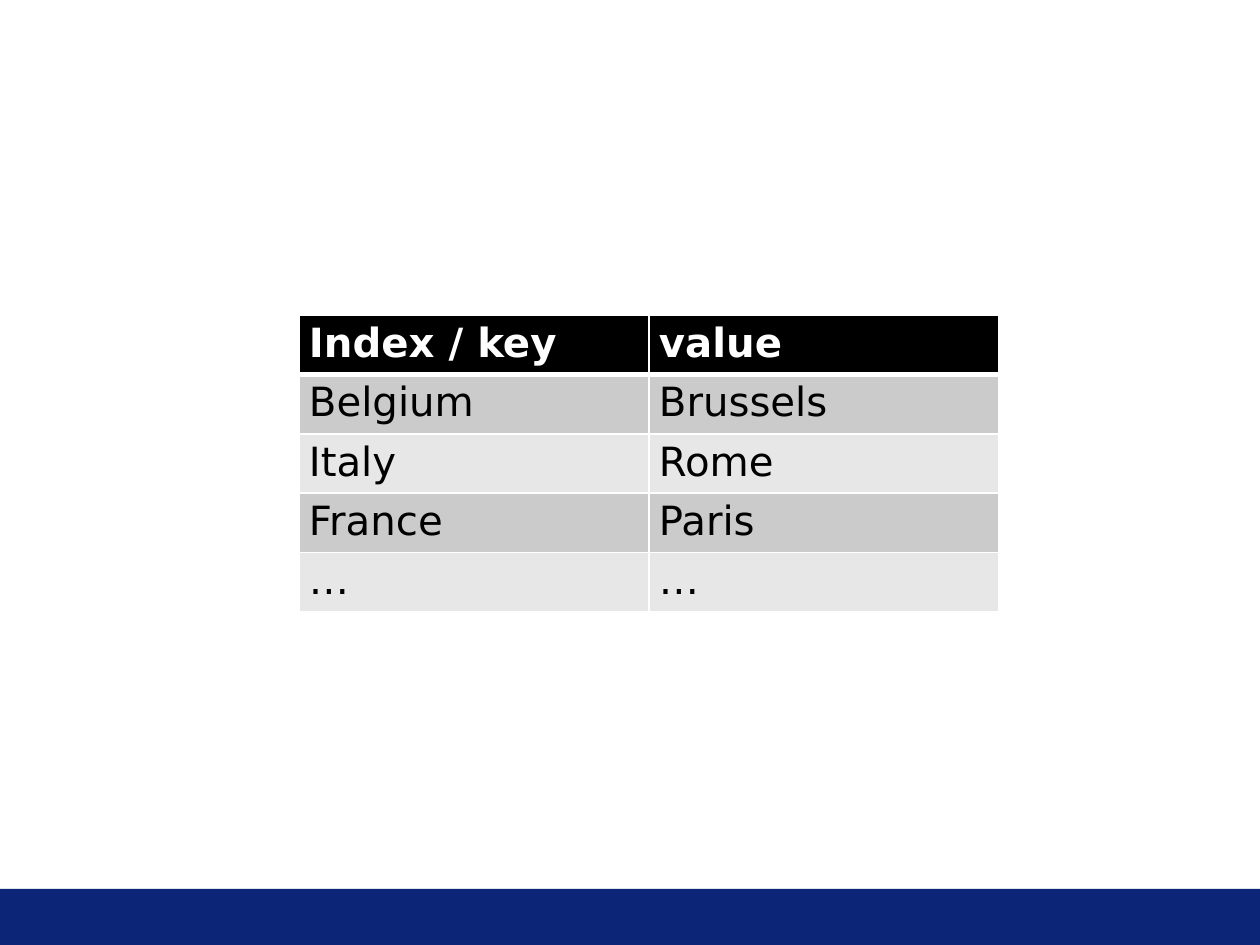
from pptx import Presentation
from pptx.dml.color import RGBColor as RGB
from pptx.enum.shapes import MSO_SHAPE as SHAPE
from pptx.oxml import parse_xml
from pptx.oxml.ns import nsdecls
from pptx.util import Pt

PX = 914400 / 126
COLORS = {
    "white": "FFFFFF",
    "black": "000000",
    "footer": "0C2577",
    "odd": "CBCBCB",
    "even": "E7E7E7",
}
ROWS = [
    ("Index / key", "value"),
    ("Belgium", "Brussels"),
    ("Italy", "Rome"),
    ("France", "Paris"),
    ("…", "…"),
]


def px(n):
    return round(n * PX)


def rgb(name):
    return RGB.from_string(COLORS[name])


class Deck:
    font = "DejaVu Sans"
    size = Pt(23)

    def __init__(self, prs):
        self.slide = prs.slides.add_slide(prs.slide_layouts[6])

    def bar(self, x, y, w, h, color):
        sp = self.slide.shapes.add_shape(SHAPE.RECTANGLE, px(x), px(y), px(w), px(h))
        sp.shadow.inherit = False
        sp.fill.solid()
        sp.fill.fore_color.rgb = rgb(color)
        sp.line.fill.background()

    def table(self, x, y, w, h, rows):
        frame = self.slide.shapes.add_table(
            len(rows), len(rows[0]), px(x), px(y), px(w), px(h))
        for i, row in enumerate(rows):
            for j, text in enumerate(row):
                self.cell(frame.table.cell(i, j), text, i)

    def cell(self, cell, text, row):
        header = row == 0
        cell.margin_left = cell.margin_right = px(10)
        cell.margin_top = cell.margin_bottom = px(5)
        cell.fill.solid()
        fill = "black" if header else "odd" if row % 2 else "even"
        cell.fill.fore_color.rgb = rgb(fill)
        p = cell.text_frame.paragraphs[0]
        p.text = text
        p.font.name = self.font
        p.font.size = self.size
        p.font.bold = header
        p.font.color.rgb = rgb("white" if header else "black")
        # A thick rule divides the header from the body
        self.borders(cell, L=1, R=1, T=3 if row == 1 else 1, B=3 if header else 1)

    def borders(self, cell, **widths):
        props = cell._tc.get_or_add_tcPr()
        for i, (side, width) in enumerate(widths.items()):
            props.insert(i, parse_xml(
                f'<a:ln{side} {nsdecls("a")} w="{Pt(width)}"><a:solidFill>'
                f'<a:srgbClr val="{COLORS["white"]}"/></a:solidFill></a:ln{side}>'))


def main():
    prs = Presentation()
    prs.slide_width, prs.slide_height = px(1260), px(945)
    deck = Deck(prs)
    # Footer band
    deck.bar(0, 889, 1260, 56, "footer")
    # Key and value table
    deck.table(299, 315, 700, 297, ROWS)
    prs.save("out.pptx")


if __name__ == "__main__":
    main()
